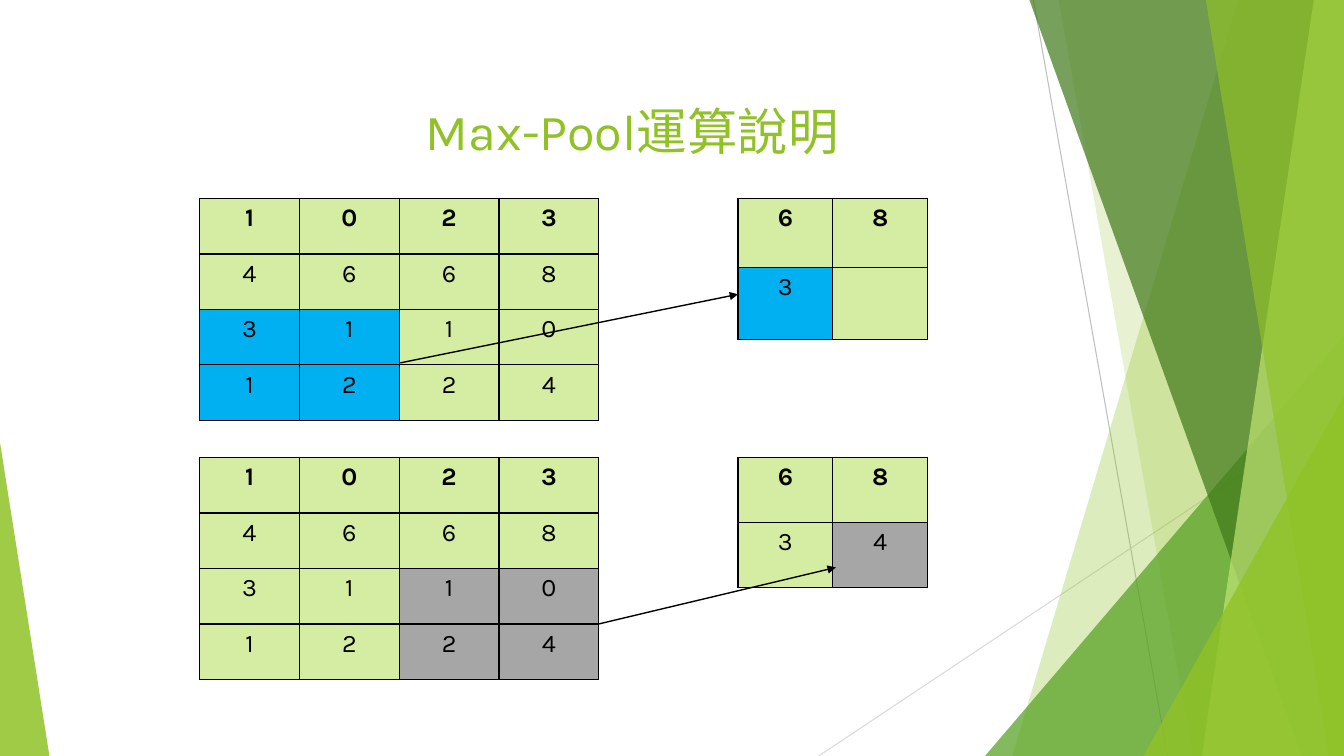
from lxml import etree
from pptx import Presentation, util as u
from pptx.dml.color import RGBColor
from pptx.enum import shapes, text
from pptx.oxml.ns import qn

FONT = "Karla"
COLORS = {
    "black": "000000", "lime": "90C226", "leaf": "54A021", "forest": "3F7819",
    "pale": "C0E474", "cell": "D5EDA2", "blue": "00B0F0", "gray": "A6A6A6",
    "silver": "BFBFBF", "mist": "D9D9D9",
}
TITLE = "Max-Pool運算說明"
INPUT = [[1, 0, 2, 3], [4, 6, 6, 8], [3, 1, 1, 0], [1, 2, 2, 4]]
INPUT_LEFT, INPUT_COLUMN, INPUT_ROWS = 1.98, 0.99, [0.55] * 4
OUTPUT_LEFT, OUTPUT_COLUMN = 7.32, 0.94
STEPS = [
    {"top": 4.54, "output": [[6, 8], [3, 4]], "output_rows": [0.64, 0.65],
     "color": "gray", "window": {(2, 2), (2, 3), (3, 2), (3, 3)}, "result": {(1, 1)},
     "arrow": (5.94, 6.19, 8.29, 5.63)},
    {"top": 1.97, "output": [[6, 8], [3, ""]], "output_rows": [0.68, 0.72],
     "color": "blue", "window": {(2, 0), (2, 1), (3, 0), (3, 1)}, "result": {(1, 0)},
     "arrow": (3.97, 3.6, 7.32, 2.92)},
]
RAYS = [((10.25, 0, 11.58, 7.5), "silver"), ((13.33, 4.03, 8.12, 7.5), "mist")]
FACETS = [
    ([(12.28, 0), (13.33, 0), (13.33, 7.5), (10.04, 7.5)], "lime", 30),
    ([(10.5, 0), (13.33, 0), (13.33, 7.5), (11.83, 7.5)], "lime", 20),
    ([(13.33, 3.33), (13.33, 7.5), (9.77, 7.5)], "leaf", 72),
    ([(10.21, 0), (13.33, 0), (13.33, 7.5), (12.91, 7.5)], "forest", 70),
    ([(13.03, 0), (13.33, 0), (13.33, 7.5), (11.92, 7.5)], "pale", 70),
    ([(11.96, 0), (13.33, 0), (13.33, 7.5), (13.18, 7.5)], "lime", 65),
    ([(13.33, 3.93), (13.33, 7.5), (11.34, 7.5)], "lime", 80),
    ([(0, 4.39), (0.49, 7.5), (0, 7.5)], "lime", 85),
]


def rgb(name):
    return RGBColor.from_string(COLORS[name])


def add_line(slide, ends, color, width, arrow=False):
    line = slide.shapes.add_connector(
        shapes.MSO_CONNECTOR.STRAIGHT, *[u.Inches(v) for v in ends])
    line.line.color.rgb = rgb(color)
    line.line.width = u.Pt(width)
    if arrow:
        etree.SubElement(line.line._get_or_add_ln(), qn("a:tailEnd"), type="triangle")
    etree.SubElement(line.element.spPr, qn("a:effectLst"))


def add_facet(slide, points, color, opacity):
    corners = [(u.Inches(x), u.Inches(y)) for x, y in points]
    builder = slide.shapes.build_freeform(*corners[0])
    builder.add_line_segments(corners[1:], close=True)
    facet = builder.convert_to_shape()
    facet.shadow.inherit = False
    facet.line.fill.background()
    facet.fill.solid()
    facet.fill.fore_color.rgb = rgb(color)
    shade = facet.element.spPr.find(qn("a:solidFill")).find(qn("a:srgbClr"))
    etree.SubElement(shade, qn("a:alpha"), val=str(opacity * 1000))


def add_borders(cell):
    properties = cell._tc.get_or_add_tcPr()
    for side in ("lnL", "lnR", "lnT", "lnB"):
        border = etree.SubElement(properties, qn(f"a:{side}"), w=str(u.Pt(1)))
        fill = etree.SubElement(border, qn("a:solidFill"))
        etree.SubElement(fill, qn("a:srgbClr"), val=COLORS["black"])


def add_matrix(slide, values, left, top, column_width, row_heights, marked, color):
    columns = len(values[0])
    matrix = slide.shapes.add_table(
        len(values), columns, u.Inches(left), u.Inches(top),
        u.Inches(column_width * columns), u.Inches(sum(row_heights))).table
    for column in matrix.columns:
        column.width = u.Inches(column_width)
    for r, height in enumerate(row_heights):
        matrix.rows[r].height = u.Inches(height)
        for c, value in enumerate(values[r]):
            cell = matrix.cell(r, c)
            add_borders(cell)
            cell.fill.solid()
            cell.fill.fore_color.rgb = rgb(color if (r, c) in marked else "cell")
            cell.text = str(value)
            number = cell.text_frame.paragraphs[0]
            number.alignment = text.PP_ALIGN.CENTER
            number.font.name = FONT
            number.font.size = u.Pt(18)
            number.font.bold = r == 0
            number.font.color.rgb = rgb("black")


def add_title(slide):
    title = slide.shapes.title
    title.left, title.top = u.Inches(1.57), u.Inches(0.94)
    title.width, title.height = u.Inches(9.4), u.Inches(1.03)
    frame = title.text_frame
    frame.text = TITLE
    frame.auto_size = text.MSO_AUTO_SIZE.NONE
    frame.vertical_anchor = text.MSO_ANCHOR.TOP
    heading = frame.paragraphs[0]
    heading.alignment = text.PP_ALIGN.CENTER
    heading.font.name = FONT
    heading.font.size = u.Pt(36)
    heading.font.color.rgb = rgb("lime")


def main():
    deck = Presentation()
    deck.slide_width, deck.slide_height = u.Inches(13.33), u.Inches(7.5)
    slide = deck.slides.add_slide(deck.slide_layouts[5])
    for ends, color in RAYS:
        add_line(slide, ends, color, 0.75)
    for points, color, opacity in FACETS:
        add_facet(slide, points, color, opacity)
    add_title(slide)
    for step in STEPS:
        add_matrix(slide, INPUT, INPUT_LEFT, step["top"], INPUT_COLUMN,
                   INPUT_ROWS, step["window"], step["color"])
        add_matrix(slide, step["output"], OUTPUT_LEFT, step["top"], OUTPUT_COLUMN,
                   step["output_rows"], step["result"], step["color"])
        add_line(slide, step["arrow"], "black", 1, arrow=True)
    deck.save("out.pptx")


if __name__ == "__main__":
    main()
